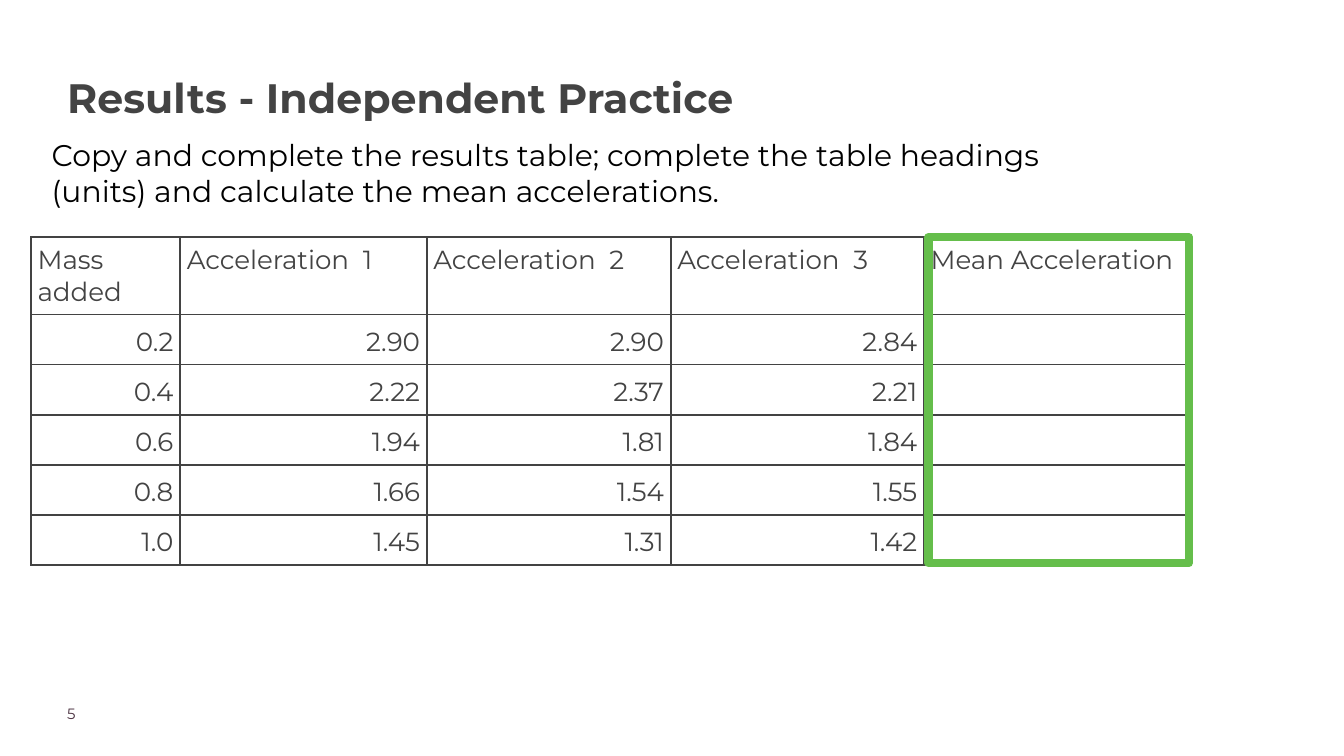
import lxml.etree
import pptx
import pptx.dml.color
import pptx.enum.shapes
import pptx.enum.text
import pptx.oxml.ns
import pptx.util

Inches = pptx.util.Inches
ALIGN = pptx.enum.text.PP_ALIGN
GREY = "434343"
GREEN = "65BE4B"

COLUMN_WIDTHS = [2.22, 3.67, 3.63, 3.77, 3.94]
HEADER_HEIGHT = 1.15
ROW_HEIGHT = 0.745
HEADINGS = ["Mass added", "Acceleration  1", "Acceleration  2",
            "Acceleration  3", "Mean Acceleration"]
RESULTS = [
    ["0.2", "2.90", "2.90", "2.84", ""],
    ["0.4", "2.22", "2.37", "2.21", ""],
    ["0.6", "1.94", "1.81", "1.84", ""],
    ["0.8", "1.66", "1.54", "1.55", ""],
    ["1.0", "1.45", "1.31", "1.42", ""],
]


def color(hex_string):
    return pptx.dml.color.RGBColor.from_string(hex_string)


def set_attributes(target, values):
    for name, value in values.items():
        setattr(target, name, value)


def write_text(text_frame, text, size, hex_color, bold=False,
               alignment=ALIGN.LEFT, line_spacing=1.0):
    text_frame.text = text
    paragraph = text_frame.paragraphs[0]
    set_attributes(paragraph, {"alignment": alignment,
                               "line_spacing": line_spacing})
    set_attributes(paragraph.font, {"name": "Montserrat", "bold": bold,
                                    "size": pptx.util.Pt(size)})
    paragraph.font.color.rgb = color(hex_color)


def set_frame(text_frame, margin):
    sides = ("margin_left", "margin_top", "margin_right", "margin_bottom")
    set_attributes(text_frame, {side: Inches(margin) for side in sides})
    set_attributes(text_frame, {
        "word_wrap": True,
        "auto_size": pptx.enum.text.MSO_AUTO_SIZE.NONE,
        "vertical_anchor": pptx.enum.text.MSO_ANCHOR.TOP,
    })


def add_title(slide, text):
    title = slide.shapes.title
    set_attributes(title, {"left": Inches(1), "top": Inches(0.97),
                           "width": Inches(14.44), "height": Inches(1.78)})
    set_frame(title.text_frame, 0)
    write_text(title.text_frame, text, 44, GREY, bold=True, line_spacing=1.15)


def add_text(slide, box, text, size, hex_color, margin):
    shape = slide.shapes.add_textbox(*map(Inches, box))
    set_frame(shape.text_frame, margin)
    write_text(shape.text_frame, text, size, hex_color)


def set_borders(cell, hex_color, width):
    properties = cell._tc.get_or_add_tcPr()
    for position, side in enumerate(("lnL", "lnR", "lnT", "lnB")):
        border = lxml.etree.Element(pptx.oxml.ns.qn("a:" + side),
                                    w=str(pptx.util.Pt(width)))
        fill = lxml.etree.SubElement(border, pptx.oxml.ns.qn("a:solidFill"))
        lxml.etree.SubElement(fill, pptx.oxml.ns.qn("a:srgbClr"), val=hex_color)
        properties.insert(position, border)


def add_results_table(slide, left, top):
    rows = [HEADINGS] + RESULTS
    heights = [HEADER_HEIGHT] + [ROW_HEIGHT] * len(RESULTS)
    table = slide.shapes.add_table(
        len(rows), len(COLUMN_WIDTHS), Inches(left), Inches(top),
        Inches(sum(COLUMN_WIDTHS)), Inches(sum(heights))).table
    set_attributes(table, {"first_row": False, "horz_banding": False})
    for column, width in zip(table.columns, COLUMN_WIDTHS):
        column.width = Inches(width)
    for row_index, (values, height) in enumerate(zip(rows, heights)):
        table.rows[row_index].height = Inches(height)
        # Headings sit left, measured values sit right
        style = {} if row_index == 0 else {"alignment": ALIGN.RIGHT,
                                           "line_spacing": 1.15}
        for column_index, value in enumerate(values):
            cell = table.cell(row_index, column_index)
            set_attributes(cell, {
                "margin_left": Inches(0.1), "margin_right": Inches(0.1),
                "margin_top": Inches(0.1), "margin_bottom": Inches(0.1)})
            cell.fill.background()
            set_borders(cell, GREY, 2.25)
            if value:
                write_text(cell.text_frame, value, 28, GREY, **style)


def add_highlight(slide, box):
    shape = slide.shapes.add_shape(
        pptx.enum.shapes.MSO_SHAPE.RECTANGLE, *map(Inches, box))
    shape.shadow.inherit = False
    shape.fill.background()
    shape.line.color.rgb = color(GREEN)
    shape.line.width = pptx.util.Pt(9)
    # Rounded corners on the outline
    lxml.etree.SubElement(shape.line._get_or_add_ln(),
                          pptx.oxml.ns.qn("a:round"))


def main():
    presentation = pptx.Presentation()
    set_attributes(presentation, {"slide_width": Inches(20),
                                  "slide_height": Inches(11.25)})
    slide = presentation.slides.add_slide(presentation.slide_layouts[5])

    # Slide number and title
    add_text(slide, (1, 10.48, 1.57, 0.39), "5", 16, "4B3241", 0)
    add_title(slide, "Results - Independent Practice")

    # Results with the column to complete outlined
    add_results_table(slide, 0.46, 3.53)
    add_highlight(slide, (13.82, 3.53, 3.87, 4.85))

    # Task
    add_text(slide, (0.67, 1.93, 16.2, 1.22),
             "Copy and complete the results table; complete the table headings "
             "(units) and calculate the mean accelerations.",
             32, "000000", 0.1)

    presentation.save("out.pptx")


if __name__ == "__main__":
    main()
